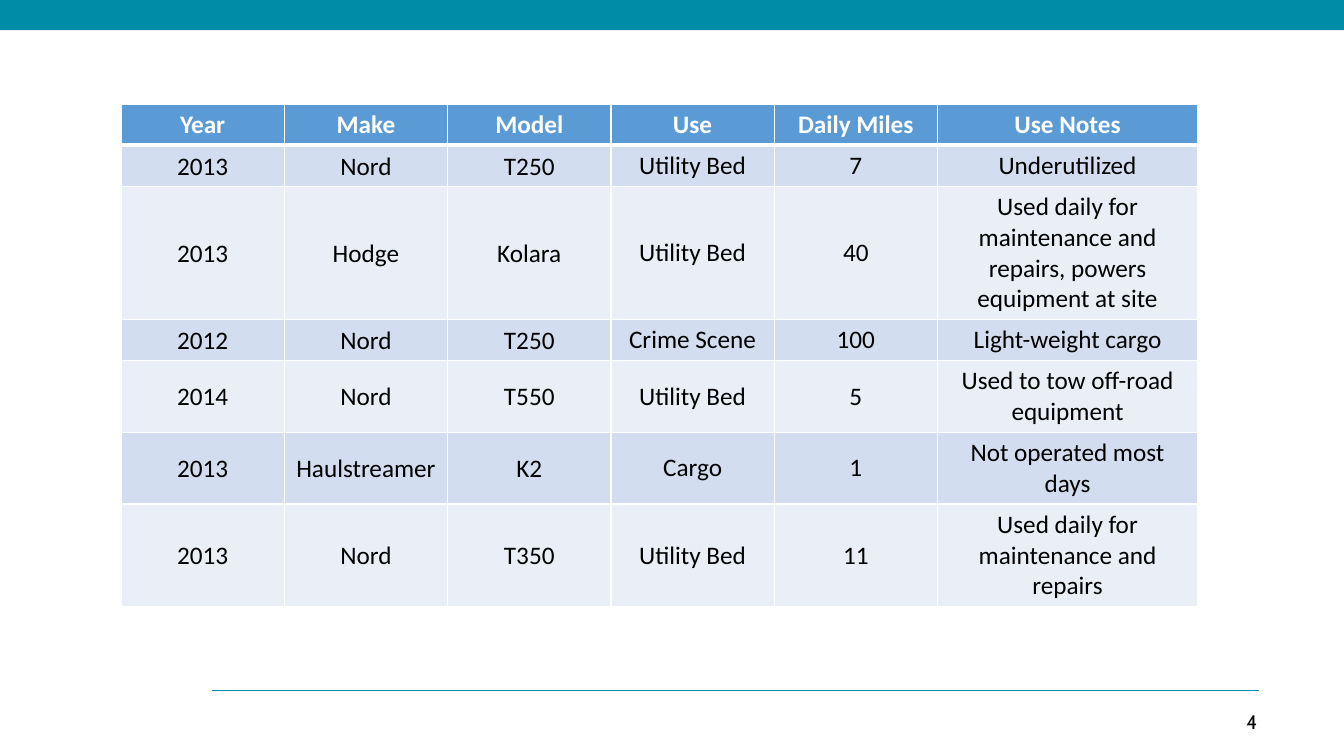
from lxml.etree import SubElement
from pptx import Presentation
from pptx.dml.color import RGBColor
from pptx.enum.shapes import MSO_CONNECTOR, MSO_SHAPE
from pptx.enum.text import MSO_ANCHOR, PP_ALIGN
from pptx.oxml.ns import qn
from pptx.util import Inches, Pt

# Content
HEADINGS = ("Year", "Make", "Model", "Use", "Daily Miles", "Use Notes")
VEHICLES = [
    ("2013", "Nord", "T250", "Utility Bed", "7", "Underutilized"),
    ("2013", "Hodge", "Kolara", "Utility Bed", "40",
     "Used daily for maintenance and repairs, powers equipment at site"),
    ("2012", "Nord", "T250", "Crime Scene", "100", "Light-weight cargo"),
    ("2014", "Nord", "T550", "Utility Bed", "5", "Used to tow off-road equipment"),
    ("2013", "Haulstreamer", "K2", "Cargo", "1", "Not operated most days"),
    ("2013", "Nord", "T350", "Utility Bed", "11", "Used daily for maintenance and repairs"),
]
PAGE_NUMBER = "4"

# Layout and colours
COLUMN_WIDTHS = [1.62] * 5 + [2.58]
ROW_HEIGHTS = [0.4, 0.41, 1.32, 0.41, 0.71, 0.71, 1.02]
TIGHT_COLUMNS = 3
TEAL = RGBColor(0x00, 0x8C, 0xA7)
BLUE = RGBColor(0x5B, 0x9B, 0xD5)
BANDS = (RGBColor(0xD2, 0xDE, 0xEF), RGBColor(0xEA, 0xEF, 0xF7))
WHITE = RGBColor(0xFF, 0xFF, 0xFF)
BLACK = RGBColor(0x00, 0x00, 0x00)

TIGHT_MARGINS = {"margin_left": Inches(0.01), "margin_right": Inches(0.01),
                 "margin_top": Inches(0.01), "margin_bottom": 0}
HEADING_FONT = {"name": "Calibri", "size": Pt(18), "bold": True}
BODY_FONT = {"name": "Calibri", "size": Pt(18), "bold": False}
NUMBER_FONT = {"name": "Cabin", "size": Pt(14)}


def set_attributes(target, values):
    for name, value in values.items():
        setattr(target, name, value)


def write(text_frame, text, alignment, font, color):
    paragraph = text_frame.paragraphs[0]
    paragraph.text = text
    paragraph.alignment = alignment
    set_attributes(paragraph.runs[0].font, font)
    paragraph.runs[0].font.color.rgb = color


def add_borders(cell, widths):
    properties = cell._tc.get_or_add_tcPr()
    for side, width in widths.items():
        line = SubElement(properties, qn(f"a:ln{side}"), w=str(Pt(width)))
        fill = SubElement(line, qn("a:solidFill"))
        SubElement(fill, qn("a:srgbClr"), val=str(WHITE))


def add_frame(slide):
    # Top band
    band = slide.shapes.add_shape(MSO_SHAPE.RECTANGLE, 0, 0, Inches(13.33), Inches(0.3))
    band.shadow.inherit = False
    band.fill.solid()
    band.fill.fore_color.rgb = TEAL
    band.line.fill.background()

    # Footer rule
    rule = slide.shapes.add_connector(
        MSO_CONNECTOR.STRAIGHT, Inches(2.1), Inches(6.85), Inches(12.49), Inches(6.85))
    rule.line.color.rgb = TEAL
    rule.line.width = Pt(1.25)
    SubElement(rule._element.spPr, qn("a:effectLst"))

    # Page number
    number = slide.shapes.add_textbox(Inches(11.96), Inches(6.99), Inches(0.61), Inches(0.4))
    number.text_frame.word_wrap = True
    write(number.text_frame, PAGE_NUMBER, PP_ALIGN.RIGHT, NUMBER_FONT, BLACK)


def add_vehicle_table(slide):
    rows = [HEADINGS] + VEHICLES
    table = slide.shapes.add_table(
        len(rows), len(HEADINGS), Inches(1.2), Inches(1.04),
        Inches(sum(COLUMN_WIDTHS)), Inches(sum(ROW_HEIGHTS))).table
    for column, width in zip(table.columns, COLUMN_WIDTHS):
        column.width = Inches(width)

    for row_index, values in enumerate(rows):
        table.rows[row_index].height = Inches(ROW_HEIGHTS[row_index])
        is_heading = row_index == 0
        for column_index, text in enumerate(values):
            cell = table.cell(row_index, column_index)
            add_borders(cell, {"L": 1, "R": 1, "T": 3 if row_index == 1 else 1,
                               "B": 3 if is_heading else 1})
            cell.fill.solid()
            cell.fill.fore_color.rgb = BLUE if is_heading else BANDS[(row_index - 1) % 2]
            if not is_heading:
                cell.vertical_anchor = MSO_ANCHOR.MIDDLE
                if column_index < TIGHT_COLUMNS:
                    set_attributes(cell, TIGHT_MARGINS)
            write(cell.text_frame, text, PP_ALIGN.CENTER,
                  HEADING_FONT if is_heading else BODY_FONT,
                  WHITE if is_heading else BLACK)


def main():
    presentation = Presentation()
    presentation.slide_width = Inches(13.33)
    presentation.slide_height = Inches(7.5)
    slide = presentation.slides.add_slide(presentation.slide_layouts[6])
    add_frame(slide)
    add_vehicle_table(slide)
    presentation.save("out.pptx")


if __name__ == "__main__":
    main()
